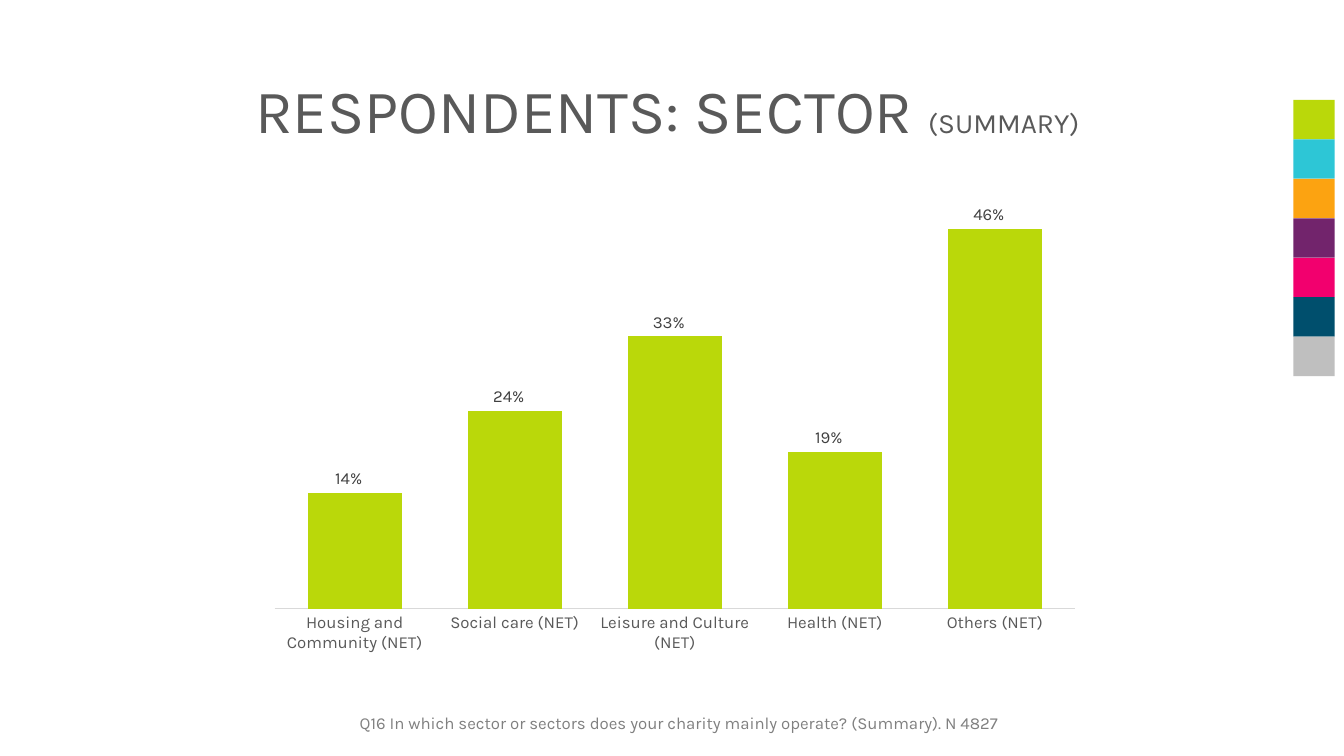
from dataclasses import dataclass

from pptx import Presentation
from pptx.chart.data import CategoryChartData
from pptx.dml.color import RGBColor
from pptx.enum.chart import XL_CHART_TYPE as ChartType, XL_LABEL_POSITION as LabelPosition
from pptx.enum.chart import XL_TICK_MARK as TickMark
from pptx.enum.shapes import MSO_SHAPE as Shape
from pptx.enum.text import MSO_ANCHOR as Anchor, MSO_AUTO_SIZE as AutoSize, PP_ALIGN as Align
from pptx.util import Pt


@dataclass(frozen=True)
class Theme:
    font: str = "Karla"
    title_size: int = 44
    subtitle_size: int = 20
    text_size: int = 12
    dark: str = "595959"
    label: str = "404040"
    note: str = "808080"
    axis: str = "D9D9D9"
    bar: str = "BAD80A"
    palette: tuple = ("BAD80A", "2DC6D6", "FCA311", "72246C", "F2006E", "004F6D", "BFBFBF")


theme = Theme()


def style_font(font, size, color):
    font.name = theme.font
    font.size = Pt(size)
    font.bold = False
    font.color.rgb = RGBColor.from_string(color)


deck = Presentation()
deck.slide_width, deck.slide_height = Pt(960), Pt(540)
page = deck.slides.add_slide(deck.slide_layouts[5])

# Palette strip at the right edge
swatch_top, swatch_height = 71.3, 28.2
for index, color in enumerate(theme.palette):
    swatch = page.shapes.add_shape(
        Shape.RECTANGLE, Pt(923.8), Pt(swatch_top + index * swatch_height),
        Pt(29.5), Pt(swatch_height))
    swatch.shadow.inherit = False
    swatch.fill.solid()
    swatch.fill.fore_color.rgb = RGBColor.from_string(color)
    swatch.line.fill.background()

# Title
title = page.shapes.title
title.left, title.top, title.width, title.height = Pt(175), Pt(28.8), Pt(624.2), Pt(104.4)
title.text_frame.vertical_anchor = Anchor.MIDDLE
title.text_frame.auto_size = AutoSize.NONE
para = title.text_frame.paragraphs[0]
para.alignment = Align.LEFT
para.line_spacing = 0.9
for text, size in (("RESPONDENTS: SECTOR ", theme.title_size), ("(SUMMARY)", theme.subtitle_size)):
    span = para.add_run()
    span.text = text
    style_font(span.font, size, theme.dark)

# Sector chart
sectors = {
    "Housing and Community (NET)": 0.14,
    "Social care (NET)": 0.24,
    "Leisure and Culture (NET)": 0.33,
    "Health (NET)": 0.19,
    "Others (NET)": 0.46,
}
chart_data = CategoryChartData(number_format="0%")
chart_data.categories = list(sectors)
chart_data.add_series("Series 1", list(sectors.values()))
chart = page.shapes.add_chart(
    ChartType.COLUMN_CLUSTERED, Pt(184.3), Pt(133.2), Pt(595.4), Pt(339.8), chart_data).chart
chart.has_legend = False
chart.has_title = False
style_font(chart.font, theme.text_size, theme.dark)

sector_axis = chart.category_axis
sector_axis.major_tick_mark = TickMark.NONE
sector_axis.format.line.color.rgb = RGBColor.from_string(theme.axis)
sector_axis.format.line.width = Pt(0.75)
style_font(sector_axis.tick_labels.font, theme.text_size, theme.dark)

share_axis = chart.value_axis
share_axis.minimum_scale, share_axis.maximum_scale = 0, 0.5
share_axis.has_major_gridlines = False
share_axis.visible = False

plot = chart.plots[0]
plot.gap_width, plot.overlap = 70, -27
plot.vary_by_categories = False
bars = plot.series[0]
bars.format.fill.solid()
bars.format.fill.fore_color.rgb = RGBColor.from_string(theme.bar)
labels = bars.data_labels
labels.show_value = True
labels.position = LabelPosition.OUTSIDE_END
labels.number_format = "0%_)_)_)"  # padding shifts the labels slightly left
labels.number_format_is_linked = False
style_font(labels.font, theme.text_size, theme.label)

# Question note
note = page.shapes.add_textbox(Pt(249.8), Pt(505.4), Pt(471.6), Pt(21.6))
note.text_frame.word_wrap = True
note.text_frame.auto_size = AutoSize.SHAPE_TO_FIT_TEXT
note.text_frame.text = (
    "Q16 In which sector or sectors does your charity mainly operate? (Summary). N 4827")
style_font(note.text_frame.paragraphs[0].runs[0].font, theme.text_size, theme.note)

deck.save("out.pptx")
